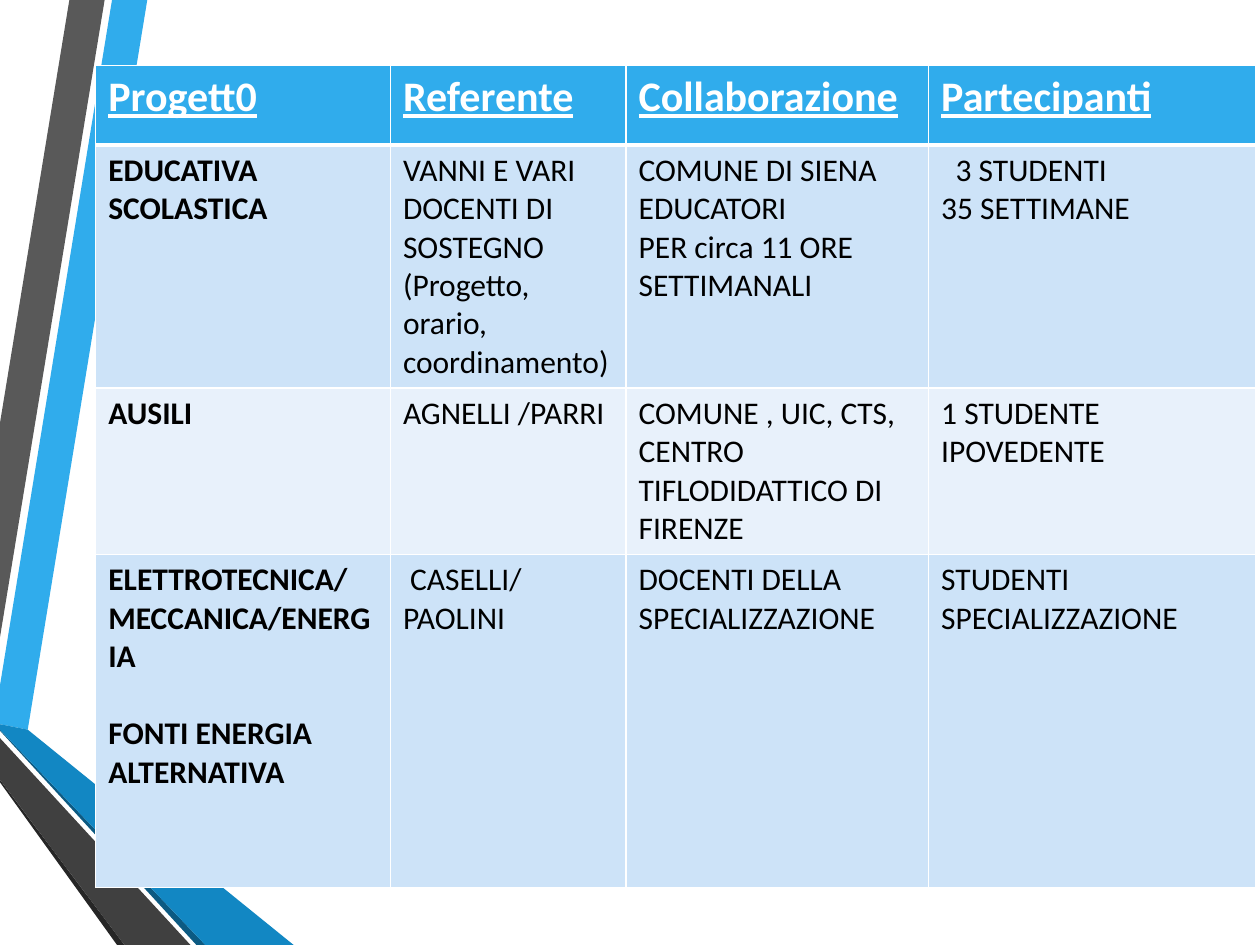
from lxml import etree
from pptx import Presentation
from pptx import util as u
from pptx.dml.color import RGBColor
from pptx.oxml.ns import qn

WHITE = RGBColor(0xFF, 0xFF, 0xFF)
BLACK = RGBColor(0, 0, 0)
SKY = RGBColor(0x30, 0xAC, 0xEC)
BLUE = RGBColor(0x12, 0x87, 0xC3)
NAVY = RGBColor(0x0C, 0x5A, 0x82)
GREY = RGBColor(0x59, 0x59, 0x59)
CHARCOAL = RGBColor(0x40, 0x40, 0x40)
SOOT = RGBColor(0x26, 0x26, 0x26)
BAND_DARK = RGBColor(0xCD, 0xE3, 0xF8)
BAND_LIGHT = RGBColor(0xE8, 0xF1, 0xFB)

FONT = "Calibri"
LINE_GAP = u.Pt(22)
NUMBER_INDENT = u.Cm(0.29)

# Corner points in cm, from back to front
RIBBONS = [
    (SKY, [(0, 13.82), (0, 14.6), (0.56, 14.71), (2.97, 0), (2.26, 0)]),
    (GREY, [(2.11, 0), (1.4, 0), (0, 8.53), (0, 12.85)]),
    (SOOT, [(0, 15.72), (0, 15.77), (2.36, 19.05), (2.51, 19.05)]),
    (NAVY, [(0, 14.71), (0, 14.73), (3.96, 19.05), (4.14, 19.05)]),
    (BLUE, [(0, 14.71), (4.14, 19.05), (5.92, 19.05), (0.56, 14.71), (0, 14.6)]),
    (CHARCOAL, [(0, 15.72), (2.51, 19.05), (3.84, 19.05), (0, 14.88)]),
]

COLUMNS = [5.94, 4.75, 6.1, 6.6]
ROWS = [1.6, 4.55, 2.39, 6.71]
# Each cell is a list of paragraphs
PROJECTS = [
    [["Progett0"], ["Referente"], ["Collaborazione"], ["Partecipanti"]],
    [["EDUCATIVA SCOLASTICA"],
     ["VANNI E VARI DOCENTI DI SOSTEGNO", "(Progetto,", "orario, coordinamento)"],
     ["COMUNE DI SIENA EDUCATORI", "PER circa 11 ORE SETTIMANALI"],
     ["3 STUDENTI", "35 SETTIMANE"]],
    [["AUSILI"],
     ["AGNELLI /PARRI"],
     ["COMUNE , UIC, CTS, CENTRO TIFLODIDATTICO DI FIRENZE"],
     ["1 STUDENTE", "IPOVEDENTE"]],
    [["ELETTROTECNICA/ MECCANICA/ENERGIA", "FONTI ENERGIA ALTERNATIVA"],
     [" CASELLI/ PAOLINI"],
     ["DOCENTI DELLA SPECIALIZZAZIONE"],
     ["STUDENTI SPECIALIZZAZIONE"]],
]


def add_ribbons(s, left, top):
    for color, corners in RIBBONS:
        pts = [(left + u.Cm(x), top + u.Cm(y)) for x, y in corners]
        builder = s.shapes.build_freeform(*pts[0])
        builder.add_line_segments(pts[1:], close=True)
        sp = builder.convert_to_shape()
        sp.shadow.inherit = False
        sp.fill.solid()
        sp.fill.fore_color.rgb = color
        sp.line.fill.background()


def set_borders(cell, top, bottom):
    """White borders; top and bottom are widths in points, the sides 1 pt."""
    tcPr = cell._tc.get_or_add_tcPr()
    widths = {"a:lnL": 1, "a:lnR": 1, "a:lnT": top, "a:lnB": bottom}
    for i, (tag, width) in enumerate(widths.items()):
        ln = etree.Element(qn(tag), w=str(u.Pt(width)))
        fill = etree.SubElement(ln, qn("a:solidFill"))
        etree.SubElement(fill, qn("a:srgbClr"), val=str(WHITE))
        tcPr.insert(i, ln)


def fill_cell(cell, paragraphs, row, col):
    header = row == 0
    cell.fill.solid()
    cell.fill.fore_color.rgb = SKY if header else BAND_DARK if row % 2 else BAND_LIGHT
    set_borders(cell, top=3 if row == 1 else 1, bottom=3 if header else 1)
    tf = cell.text_frame
    for i, line in enumerate(paragraphs):
        p = tf.add_paragraph() if i else tf.paragraphs[0]
        if i and col == 0:
            p.space_before = LINE_GAP
        if line == "3 STUDENTI":
            p._p.get_or_add_pPr().set("marL", str(NUMBER_INDENT))
        r = p.add_run()
        r.text = line
        r.font.name = FONT
        r.font.size = u.Pt(24 if header else 18)
        r.font.bold = header or col == 0
        r.font.underline = header
        r.font.color.rgb = WHITE if header else BLACK


def add_projects_table(s, left, top):
    width, height = u.Cm(sum(COLUMNS)), u.Cm(sum(ROWS))
    table = s.shapes.add_table(len(ROWS), len(COLUMNS), left, top, width, height).table
    for column, w in zip(table.columns, COLUMNS):
        column.width = u.Cm(w)
    for row, h in zip(table.rows, ROWS):
        row.height = u.Cm(h)
    for i, cells in enumerate(PROJECTS):
        for j, paragraphs in enumerate(cells):
            fill_cell(table.cell(i, j), paragraphs, i, j)


def main():
    prs = Presentation()
    prs.slide_width, prs.slide_height = u.Cm(25.4), u.Cm(19.05)
    s = prs.slides.add_slide(prs.slide_layouts[6])
    add_ribbons(s, u.Cm(0), u.Cm(0))
    add_projects_table(s, u.Cm(1.93), u.Cm(1.32))
    prs.save("out.pptx")


if __name__ == "__main__":
    main()
